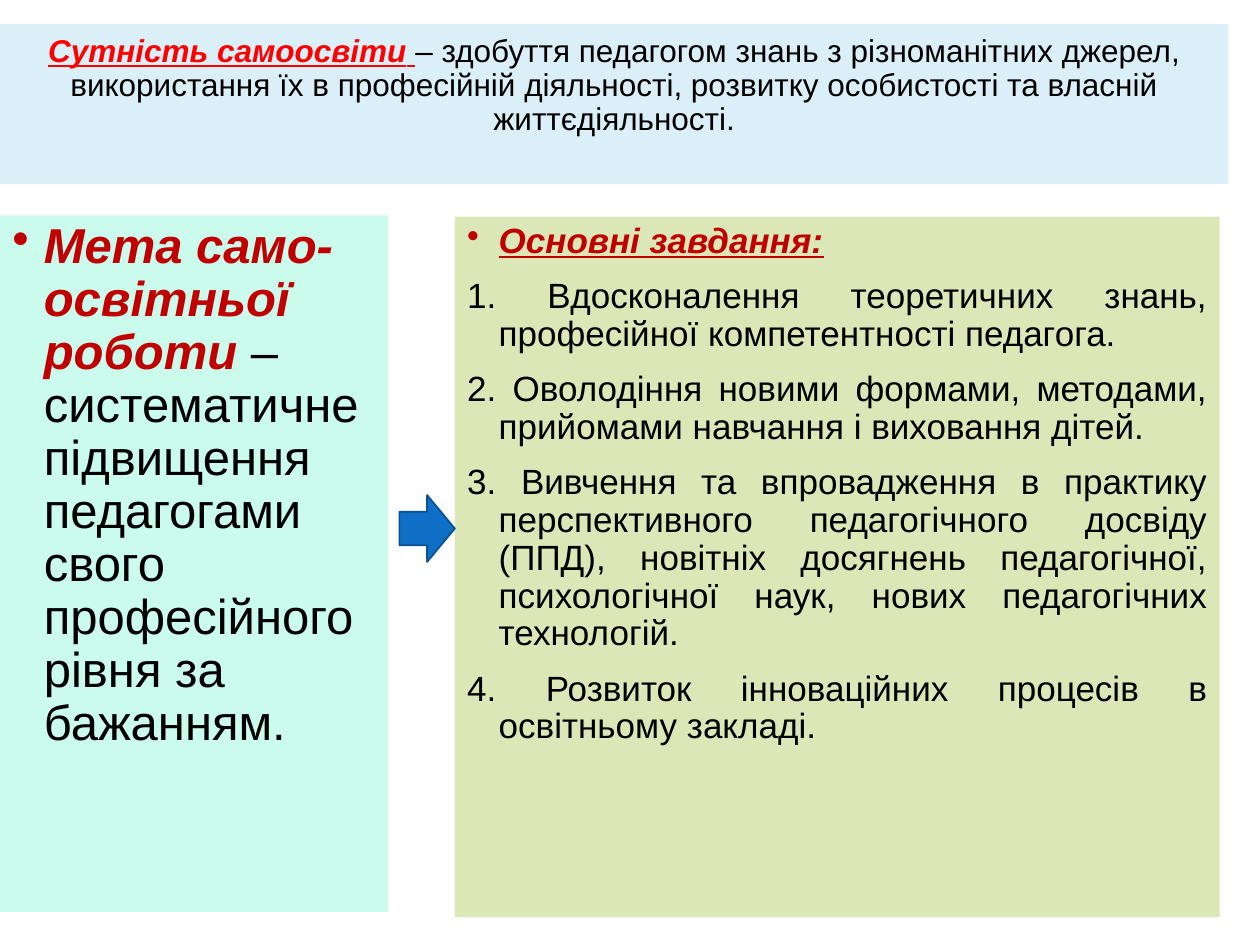
from dataclasses import dataclass

from lxml import etree
from pptx import Presentation
from pptx.dml.color import RGBColor
from pptx.enum.shapes import MSO_SHAPE
from pptx.enum.text import MSO_ANCHOR, MSO_AUTO_SIZE, PP_ALIGN
from pptx.oxml.ns import qn
from pptx.util import Inches, Pt

RECTANGLE, RIGHT_ARROW = MSO_SHAPE.RECTANGLE, MSO_SHAPE.RIGHT_ARROW
LEFT, CENTER, JUSTIFY = PP_ALIGN.LEFT, PP_ALIGN.CENTER, PP_ALIGN.JUSTIFY
TOP, NO_AUTOFIT = MSO_ANCHOR.TOP, MSO_AUTO_SIZE.NONE


@dataclass(frozen=True)
class Theme:
    font: str = "Arial"
    text: str = "000000"
    title_accent: str = "FF0000"
    body_accent: str = "C00000"
    title_fill: str = "DBEFF9"
    goal_fill: str = "CAFBED"
    tasks_fill: str = "DBE7B6"
    arrow_fill: str = "0F6FC6"
    arrow_line: str = "0B5292"
    title_size: int = 18
    goal_size: int = 28
    tasks_size: int = 20


THEME = Theme()
SLIDE_WIDTH, SLIDE_HEIGHT = 10, 7.5

ESSENCE = ("Сутність самоосвіти", " ",
           "– здобуття педагогом знань з різноманітних джерел, використання їх в "
           "професійній діяльності, розвитку особистості та власній життєдіяльності.")
GOAL = ("Мета само-освітньої роботи ",
        "– систематичне підвищення педагогами свого професійного рівня за бажанням.")
TASKS_HEADING = "Основні завдання:"
TASKS = [
    "Вдосконалення теоретичних знань, професійної компетентності педагога.",
    "Оволодіння новими формами, методами, прийомами навчання і виховання дітей.",
    "Вивчення та впровадження в практику перспективного педагогічного досвіду (ППД), "
    "новітніх досягнень педагогічної, психологічної наук, нових педагогічних технологій.",
    "Розвиток інноваційних процесів в освітньому закладі.",
]

TITLE_BOX = (0, 0.19, 9.75, 1.27)
GOAL_BOX = (0, 1.71, 3.08, 5.53)
TASKS_BOX = (3.61, 1.72, 6.07, 5.56)
ARROW_WIDTH, ARROW_HEIGHT, ARROW_TOP = 0.44, 0.53, 3.93
ARROW_BOX = (TASKS_BOX[0] - ARROW_WIDTH, ARROW_TOP, ARROW_WIDTH, ARROW_HEIGHT)


def color(value):
    return RGBColor.from_string(value)


def place(shape, box):
    shape.left, shape.top, shape.width, shape.height = map(Inches, box)


def paint(shape, fill):
    shape.fill.solid()
    shape.fill.fore_color.rgb = color(fill)


def prepare_frame(shape, margin_top=0.05):
    frame = shape.text_frame
    frame.word_wrap = True
    frame.auto_size = NO_AUTOFIT
    frame.vertical_anchor = TOP
    frame.margin_left = frame.margin_right = Inches(0.1)
    frame.margin_top, frame.margin_bottom = Inches(margin_top), Inches(0.05)
    return frame


def add_panel(slide, box, fill):
    shape = slide.shapes.add_shape(RECTANGLE, *map(Inches, box))
    shape.shadow.inherit = False
    shape.line.fill.background()
    paint(shape, fill)
    return prepare_frame(shape)


def add_run(paragraph, text, *, size, fill=THEME.text, bold=False, italic=False, underline=False):
    run = paragraph.add_run()
    run.text = text
    font = run.font
    font.name, font.size = THEME.font, Pt(size)
    font.bold, font.italic, font.underline = bold, italic, underline
    font.color.rgb = color(fill)


def format_paragraph(paragraph, *, align, space_before=0, hanging=0, bullet=None):
    properties = paragraph._p.get_or_add_pPr()
    if hanging:
        properties.set("marL", str(Inches(hanging)))
        properties.set("indent", str(-Inches(hanging)))
    if bullet:
        etree.SubElement(properties, qn("a:buChar")).set("char", bullet)
    paragraph.alignment = align
    paragraph.line_spacing = 0.9
    paragraph.space_before = Pt(space_before)
    return paragraph


def add_title(slide):
    title = slide.shapes.title
    place(title, TITLE_BOX)
    paint(title, THEME.title_fill)
    frame = prepare_frame(title, margin_top=0.09)
    paragraph = format_paragraph(frame.paragraphs[0], align=CENTER)
    term, gap, definition = ESSENCE
    accent = dict(size=THEME.title_size, fill=THEME.title_accent, bold=True, underline=True)
    add_run(paragraph, term, italic=True, **accent)
    add_run(paragraph, gap, **accent)
    add_run(paragraph, definition, size=THEME.title_size)


def add_goal(slide):
    frame = add_panel(slide, GOAL_BOX, THEME.goal_fill)
    paragraph = format_paragraph(frame.paragraphs[0], align=LEFT, hanging=0.25, bullet="•")
    term, definition = GOAL
    add_run(paragraph, term, size=THEME.goal_size, fill=THEME.body_accent, bold=True, italic=True)
    add_run(paragraph, definition, size=THEME.goal_size)


def add_tasks(slide):
    frame = add_panel(slide, TASKS_BOX, THEME.tasks_fill)
    heading = format_paragraph(frame.paragraphs[0], align=JUSTIFY, hanging=0.25, bullet="•")
    add_run(heading, TASKS_HEADING, size=THEME.tasks_size, fill=THEME.body_accent,
            bold=True, italic=True, underline=True)
    for number, task in enumerate(TASKS, start=1):
        paragraph = format_paragraph(frame.add_paragraph(), align=JUSTIFY,
                                     space_before=10, hanging=0.25)
        add_run(paragraph, f"{number}. {task}", size=THEME.tasks_size)


def add_arrow(slide):
    arrow = slide.shapes.add_shape(RIGHT_ARROW, *map(Inches, ARROW_BOX))
    arrow.shadow.inherit = False
    paint(arrow, THEME.arrow_fill)
    arrow.line.color.rgb = color(THEME.arrow_line)
    arrow.line.width = Pt(1)


def main():
    presentation = Presentation()
    presentation.slide_width = Inches(SLIDE_WIDTH)
    presentation.slide_height = Inches(SLIDE_HEIGHT)
    slide = presentation.slides.add_slide(presentation.slide_layouts.get_by_name("Title Only"))
    add_title(slide)
    add_goal(slide)
    add_tasks(slide)
    add_arrow(slide)
    presentation.save("out.pptx")


if __name__ == "__main__":
    main()
